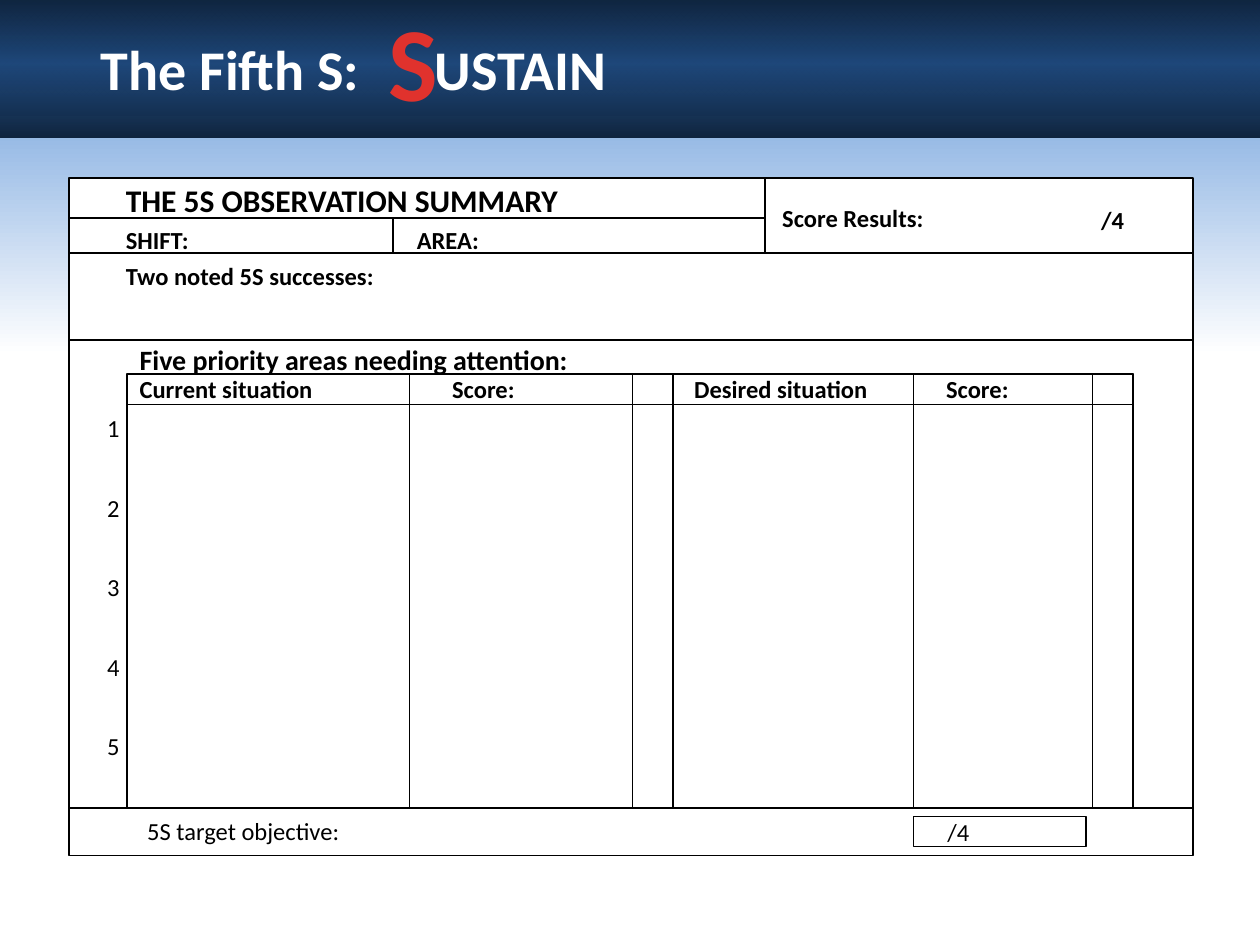
import pptx
import pptx.util
import pptx.dml.color
import pptx.enum.dml
import pptx.enum.shapes
import pptx.enum.text
import pptx.oxml
import pptx.oxml.ns

Inches = pptx.util.Inches
Pt = pptx.util.Pt
Align = pptx.enum.text.PP_ALIGN
Anchor = pptx.enum.text.MSO_ANCHOR
Preset = pptx.enum.shapes.MSO_SHAPE

FONT = "Calibri"
BLACK, WHITE, RED = "000000", "FFFFFF", "E0322D"
NAVY_STOPS = [(0, "0F243E", 90), (46, "1F497D", 90), (100, "0F243E", 100)]
SKY_STOPS = [(0, "8EB4E3", 100), (29, WHITE, 100), (100, WHITE, 100)]
COLUMNS = {"form": 0.55, "table": 1.01, "shift": 3.12, "score": 3.25,
           "gap": 5.02, "results": 6.07, "desired": 7.25, "mark": 8.67,
           "table_end": 8.99, "form_end": 9.47}
ROWS = {"form": 1.41, "shift": 1.73, "successes": 2.01, "priorities": 2.7,
        "table": 2.97, "table_body": 3.21, "objective": 6.41, "form_end": 6.79}
RULES = [("form", "successes", "form_end", "successes", 1),
         ("results", "form", "results", "successes", 1),
         ("form", "shift", "results", "shift", 1),
         ("shift", "shift", "shift", "successes", 1),
         ("form", "priorities", "form_end", "priorities", 1),
         ("table", "table_body", "table_end", "table_body", 1),
         ("form", "objective", "form_end", "objective", 1),
         ("desired", "table", "desired", "objective", 0.75),
         ("score", "table", "score", "objective", 0.75)]
FRAMES = [("table", "table_end"), ("gap", 5.34), ("mark", "table_end")]


def color(value):
    return pptx.dml.color.RGBColor.from_string(value)


def apply(target, values):
    for name, value in values.items():
        setattr(target, name, value)


def add_box(slide, left, top, width, height, fill=None, line=None,
            preset=Preset.RECTANGLE):
    shape = slide.shapes.add_shape(
        preset, *map(Inches, (left, top, width, height)))
    shape.shadow.inherit = False
    shape.fill.background()
    shape.line.fill.background()
    if fill:
        shape.fill.solid()
        shape.fill.fore_color.rgb = color(fill)
    if line:
        shape.line.color.rgb = color(line)
        shape.line.width = Pt(1)
    return shape


def add_gradient(slide, top, height, stops):
    shape = add_box(slide, 0, top, 10, height)
    shape.fill.gradient()
    shape.fill.gradient_angle = 270
    stop_list = shape._element.spPr.find(".//" + pptx.oxml.ns.qn("a:gsLst"))
    stop_list.clear()
    for position, value, opacity in stops:
        stop_list.append(pptx.oxml.parse_xml(
            f'<a:gs {pptx.oxml.ns.nsdecls("a")} pos="{position * 1000}">'
            f'<a:srgbClr val="{value}"><a:alpha val="{opacity * 1000}"/>'
            '</a:srgbClr></a:gs>'))


def add_pattern(slide, height):
    shape = add_box(slide, 0, 0, 10, height)
    shape.fill.patterned()
    shape.fill.pattern = pptx.enum.dml.MSO_PATTERN.from_xml("openDmnd")
    shape.fill.fore_color.rgb = color("0F243E")
    shape.fill.back_color.rgb = color("558ED5")


def add_rule(slide, start_column, start_row, end_column, end_row, width):
    line = slide.shapes.add_connector(
        pptx.enum.shapes.MSO_CONNECTOR.STRAIGHT,
        Inches(COLUMNS[start_column]), Inches(ROWS[start_row]),
        Inches(COLUMNS[end_column]), Inches(ROWS[end_row]))
    line.line.color.rgb = color(BLACK)
    line.line.width = Pt(width)
    line._element.spPr.append(pptx.oxml.parse_xml(
        f'<a:effectLst {pptx.oxml.ns.nsdecls("a")}/>'))


def write(shape, lines, size=14, font_color=BLACK, bold=True, tab=None,
          frame_format=None, paragraph_format=None, gap=0):
    frame = shape.text_frame
    apply(frame, {"word_wrap": True, "vertical_anchor": Anchor.TOP,
                  "auto_size": pptx.enum.text.MSO_AUTO_SIZE.NONE,
                  **(frame_format or {})})
    for index, text in enumerate(lines):
        paragraph = frame.add_paragraph() if index else frame.paragraphs[0]
        apply(paragraph, {"alignment": Align.LEFT,
                          "space_before": Pt(gap if index else 0),
                          **(paragraph_format or {})})
        if tab:
            paragraph._p.get_or_add_pPr().append(pptx.oxml.parse_xml(
                f'<a:tabLst {pptx.oxml.ns.nsdecls("a")}>'
                f'<a:tab pos="{Inches(tab)}" algn="l"/></a:tabLst>'))
        run = paragraph.add_run()
        run.text = text
        apply(run.font, {"name": FONT, "size": Pt(size), "bold": bold})
        run.font.color.rgb = color(font_color)


def add_label(slide, left, top, width, height, lines, **text_format):
    box = slide.shapes.add_textbox(*map(Inches, (left, top, width, height)))
    write(box, lines, **text_format)
    return box


def add_backdrop(slide):
    add_pattern(slide, 3.49)
    add_gradient(slide, 0, 3.49, NAVY_STOPS)
    add_gradient(slide, 0.92, 6.54, SKY_STOPS)
    add_gradient(slide, 0, 1.09, NAVY_STOPS)


def add_title(slide):
    title = slide.shapes.title
    slide.shapes._spTree.append(title._element)
    apply(title, {"left": Inches(0.8), "top": Inches(0.38),
                  "width": Inches(9.2), "height": Inches(0.43)})
    margins = dict.fromkeys(
        ["margin_left", "margin_top", "margin_right", "margin_bottom"], 0)
    write(title, ["The Fifth S:\tUSTAIN"], size=32, font_color=WHITE, tab=2.65,
          frame_format=margins, paragraph_format={"line_spacing": 0.8})
    add_label(slide, 2.93, -0.08, 0.7, 1.11, ["S"], size=60, font_color=RED,
              paragraph_format={"alignment": Align.CENTER})


def add_form(slide):
    left, top = COLUMNS["form"], ROWS["form"]
    add_box(slide, left, top, COLUMNS["form_end"] - left,
            ROWS["form_end"] - top, WHITE, BLACK, Preset.FLOWCHART_PROCESS)
    for start, end in FRAMES:
        add_box(slide, COLUMNS[start], ROWS["table"],
                COLUMNS.get(end, end) - COLUMNS[start],
                ROWS["objective"] - ROWS["table"], line=BLACK)
    for rule in RULES:
        add_rule(slide, *rule)


def add_labels(slide):
    heading = add_label(slide, 0.9, 1.41, 4.51, 1,
                        ["THE 5S OBSERVATION SUMMARY", "SHIFT:\tAREA:",
                         "Two noted 5S successes:"],
                        tab=2.31, gap=4.5,
                        paragraph_format={"line_spacing": 0.95})
    heading.text_frame.paragraphs[0].runs[0].font.size = Pt(18)
    add_label(slide, 6.11, 1.56, 1.93, 0.33, ["Score Results:"])
    add_label(slide, 8.64, 1.58, 0.5, 0.33, ["/4"])
    add_label(slide, 1.01, 2.67, 4.68, 0.37,
              ["Five priority areas needing attention:"], size=16)
    add_label(slide, 1.01, 2.92, 4.02, 0.33,
              ["Current situation\tScore:"], tab=2.48)
    add_label(slide, 5.41, 2.92, 3.22, 0.33,
              ["Desired situation\tScore:"], tab=2)
    add_label(slide, 0.65, 3.23, 0.5, 3.02, [str(n) for n in range(1, 6)],
              bold=False, gap=28.6,
              paragraph_format={"alignment": Align.CENTER})
    add_label(slide, 1.07, 6.43, 3.58, 0.33, ["5S target objective:"],
              bold=False)
    target = add_box(slide, COLUMNS["desired"], 6.48, 1.37, 0.24, line=BLACK)
    write(target, ["/4"], bold=False,
          frame_format={"vertical_anchor": Anchor.MIDDLE,
                        "margin_left": Inches(0.27)})


def main():
    presentation = pptx.Presentation()
    apply(presentation, {"slide_width": Inches(10), "slide_height": Inches(7.5)})
    slide = presentation.slides.add_slide(presentation.slide_layouts[5])
    add_backdrop(slide)
    add_form(slide)
    add_labels(slide)
    add_title(slide)
    presentation.save("out.pptx")


if __name__ == "__main__":
    main()
